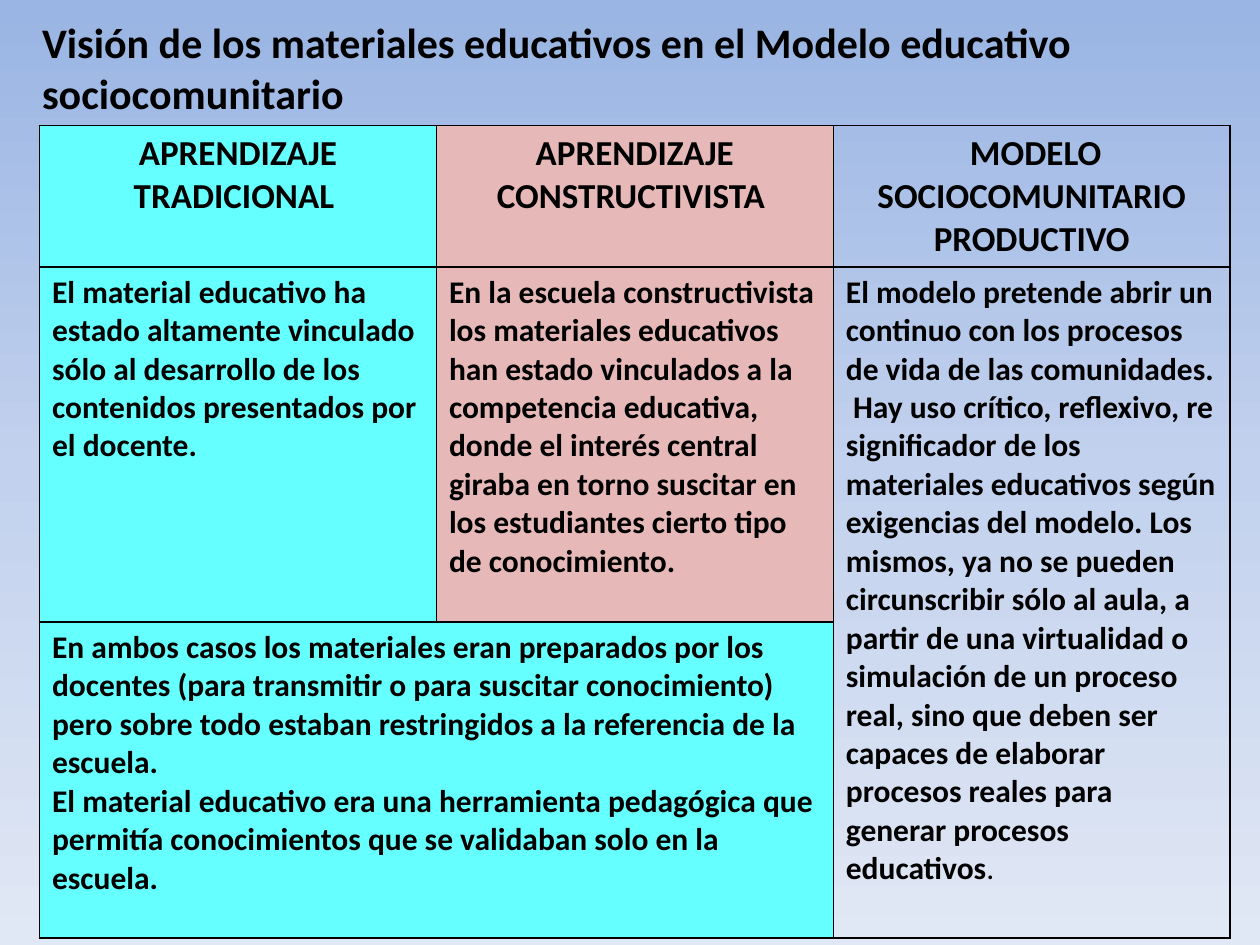
import copy
from dataclasses import dataclass

import pptx
import pptx.util
import pptx.dml.color
import pptx.enum.text
import pptx.oxml
import pptx.oxml.ns

Pt = pptx.util.Pt
Rgb = pptx.dml.color.RGBColor.from_string
Align = pptx.enum.text.PP_ALIGN


@dataclass(frozen=True)
class Theme:
    face: str = "Calibri"
    ink: str = "000000"
    cyan: str = "66FFFF"
    pink: str = "E6B9B8"
    sky: tuple = ((0, "9AB5E4"), (0.5, "C2D1ED"), (1, "E1E8F5"))
    title: int = 24
    head: int = 20
    body: int = 18
    line: int = 1


THEME = Theme()

TITLE = "Visión de los materiales educativos en el Modelo educativo sociocomunitario"
HEADS = [
    "APRENDIZAJE TRADICIONAL ",
    "APRENDIZAJE CONSTRUCTIVISTA ",
    " MODELO SOCIOCOMUNITARIO PRODUCTIVO",
]
OLD = (
    "El material educativo ha estado altamente vinculado sólo al desarrollo "
    "de los contenidos presentados por el docente."
)
BUILT = (
    "En la escuela constructivista los materiales educativos han estado "
    "vinculados a la competencia educativa, donde el interés central giraba "
    "en torno suscitar en los estudiantes cierto tipo de conocimiento."
)
SOCIAL = (
    "El modelo pretende abrir un continuo con los procesos de vida de las "
    "comunidades.  Hay uso crítico, reflexivo, re significador de los "
    "materiales educativos según exigencias del modelo. Los mismos, ya no se "
    "pueden circunscribir sólo al aula, a partir de una virtualidad o "
    "simulación de un proceso real, sino que deben ser capaces de elaborar "
    "procesos reales para generar procesos educativos"
)
BOTH = [
    "En ambos casos los materiales eran preparados por los docentes (para "
    "transmitir o para suscitar conocimiento) pero sobre todo estaban "
    "restringidos a la referencia de la escuela.",
    "El material educativo era una herramienta pedagógica que permitía "
    "conocimientos que se validaban solo en la escuela.",
]


def apply(item, form):
    for name, value in form.items():
        setattr(item, name, value)


def add_run(para, text, size, bold=True):
    run = para.add_run()
    run.text = text
    apply(run.font, {"name": THEME.face, "size": Pt(size), "bold": bold})
    run.font.color.rgb = Rgb(THEME.ink)


def fill_text(frame, lines, size, align):
    for i, text in enumerate(lines):
        para = frame.add_paragraph() if i else frame.paragraphs[0]
        para.alignment = align
        add_run(para, text, size)


def paint_back(slide):
    fill = slide.background.fill
    fill.gradient()
    fill.gradient_angle = 270
    stops = slide.element.find(".//" + pptx.oxml.ns.qn("a:gsLst"))
    stops.append(copy.deepcopy(stops[-1]))
    for stop, (place, color) in zip(fill.gradient_stops, THEME.sky):
        stop.position = place
        stop.color.rgb = Rgb(color)


def put_title(slide, left, top, width, height):
    title = slide.shapes.title
    apply(title, {"left": left, "top": top, "width": width, "height": height})
    apply(title.text_frame, {
        "word_wrap": True,
        "auto_size": pptx.enum.text.MSO_AUTO_SIZE.NONE,
        "vertical_anchor": pptx.enum.text.MSO_ANCHOR.TOP,
    })
    fill_text(title.text_frame, [TITLE], THEME.title, Align.LEFT)


def style_cell(cell, color):
    props = cell._tc.get_or_add_tcPr()
    for side in "LRTB":
        props.append(pptx.oxml.parse_xml(
            f'<a:ln{side} {pptx.oxml.ns.nsdecls("a")} w="{Pt(THEME.line)}">'
            f'<a:solidFill><a:srgbClr val="{THEME.ink}"/></a:solidFill>'
            f'</a:ln{side}>'))
    if color:
        cell.fill.solid()
        cell.fill.fore_color.rgb = Rgb(color)
    else:
        cell.fill.background()


def put_table(slide, left, top, width, height):
    grid = slide.shapes.add_table(3, 3, left, top, width, height).table
    apply(grid, {"first_row": False, "horz_banding": False})
    for col in grid.columns:
        col.width = width // 3
    tall = (Pt(79.4), Pt(203))
    for row, size in zip(grid.rows, (*tall, height - sum(tall))):
        row.height = size

    fills = [
        [THEME.cyan, THEME.pink, None],
        [THEME.cyan, THEME.pink, None],
        [THEME.cyan, THEME.cyan, None],
    ]
    for r, colors in enumerate(fills):
        for c, color in enumerate(colors):
            style_cell(grid.cell(r, c), color)
    grid.cell(1, 2).merge(grid.cell(2, 2))
    grid.cell(2, 0).merge(grid.cell(2, 1))

    for c, text in enumerate(HEADS):
        fill_text(grid.cell(0, c).text_frame, [text], THEME.head, Align.CENTER)
    parts = {(1, 0): [OLD], (1, 1): [BUILT], (1, 2): [SOCIAL], (2, 0): BOTH}
    for place, lines in parts.items():
        fill_text(grid.cell(*place).text_frame, lines, THEME.body, Align.LEFT)
    add_run(grid.cell(1, 2).text_frame.paragraphs[0], ".", THEME.body, False)


def main():
    deck = pptx.Presentation()
    apply(deck, {"slide_width": Pt(720), "slide_height": Pt(540)})
    slide = deck.slides.add_slide(deck.slide_layouts[5])
    paint_back(slide)
    put_title(slide, Pt(16.8), Pt(6), Pt(680.4), Pt(65.4))
    put_table(slide, Pt(22.6), Pt(71.8), Pt(680.4), Pt(463))
    deck.save("out.pptx")


if __name__ == "__main__":
    main()
